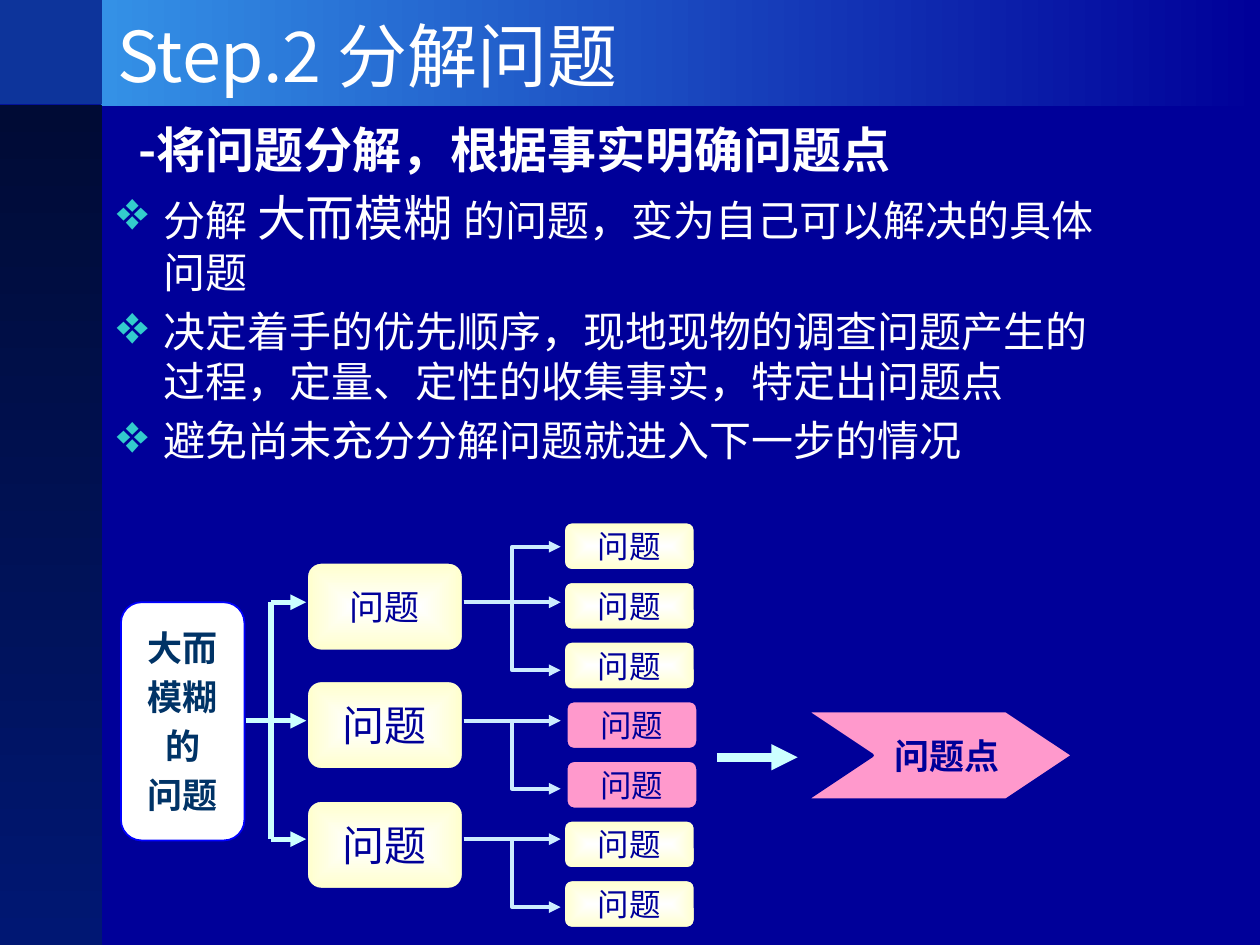
from dataclasses import dataclass
from typing import Optional

from lxml import etree
from pptx import Presentation
from pptx.dml.color import RGBColor
from pptx.enum import shapes, text
from pptx.oxml import ns
from pptx.util import Inches, Pt

KIND = shapes.MSO_SHAPE
LINK = shapes.MSO_CONNECTOR


@dataclass(frozen=True)
class Theme:
    """Colours, font and type sizes of the slide."""
    font: str = "Noto Sans CJK SC"
    navy: str = "000099"
    white: str = "FFFFFF"
    cream: str = "FFFFCC"
    pink: str = "FF99CC"
    ink: str = "003366"
    edge: str = "0000FF"
    mark: str = "33CCCC"
    pale: str = "CCECFF"
    cyan: str = "CCFFFF"
    sky: str = "3491E6"
    night: str = "000B35"
    dusk: str = "001773"
    blue: str = "0D349B"
    title: int = 40
    head: int = 28
    body: int = 24
    label: int = 20
    leaf: int = 18


T = Theme()


@dataclass(frozen=True)
class Box:
    """A filled shape with an optional label."""
    x: float
    y: float
    w: float
    h: float
    fill: tuple[str, ...]
    kind: int = KIND.ROUNDED_RECTANGLE
    turn: Optional[int] = None
    line: Optional[str] = None
    width: float = 2
    lines: tuple[str, ...] = ()
    size: int = T.leaf
    ink: str = T.navy
    bold: bool = False
    pad: float = 0


@dataclass(frozen=True)
class Wire:
    """A line between two points."""
    x1: float
    y1: float
    x2: float
    y2: float
    color: str
    width: float
    kind: int = LINK.STRAIGHT
    tip: bool = True


def rgb(code: str) -> RGBColor:
    """Turn a hex code into a colour."""
    return RGBColor.from_string(code)


def add(parent, tag: str, **attrs: str):
    """Append a DrawingML element."""
    return etree.SubElement(parent, ns.qn(tag), attrs)


def style(para, size: int, color: str, bold: bool = False) -> None:
    """Set the font of a whole paragraph."""
    font = para.font
    font.size, font.bold, font.name = Pt(size), bold, T.font
    font.color.rgb = rgb(color)
    add(para._p.pPr.find(ns.qn("a:defRPr")), "a:ea", typeface=T.font)


def paint(shape, box: Box) -> None:
    """Fill a shape with a plain colour, a linear or a centred gradient."""
    fill = shape.fill
    if len(box.fill) == 1:
        fill.solid()
        fill.fore_color.rgb = rgb(box.fill[0])
        return
    fill.gradient()
    for stop, code in zip(fill.gradient_stops, box.fill):
        stop.color.rgb = rgb(code)
    if box.turn is not None:
        fill.gradient_angle = box.turn
        return
    grad = shape._element.spPr.find(ns.qn("a:gradFill"))
    grad.remove(grad.find(ns.qn("a:lin")))
    path = add(grad, "a:path", path="shape")
    add(path, "a:fillToRect", l="50000", t="50000", r="50000", b="50000")


def draw(slide, box: Box):
    """Draw a box and its label."""
    place = map(Inches, (box.x, box.y, box.w, box.h))
    shape = slide.shapes.add_shape(box.kind, *place)
    shape.shadow.inherit = False
    paint(shape, box)
    if box.line:
        shape.line.color.rgb = rgb(box.line)
        shape.line.width = Pt(box.width)
    else:
        shape.line.fill.background()
    frame = shape.text_frame
    frame.word_wrap = False
    frame.vertical_anchor = text.MSO_ANCHOR.MIDDLE
    frame.margin_left = Inches(box.pad)
    frame.margin_top = frame.margin_right = frame.margin_bottom = 0
    for i, words in enumerate(box.lines):
        para = frame.add_paragraph() if i else frame.paragraphs[0]
        para.text = words
        para.alignment = text.PP_ALIGN.CENTER
        para.space_before = Pt(4 if i else 0)
        style(para, box.size, box.ink, box.bold)
    return shape


def join(slide, wire: Wire) -> None:
    """Draw a line, with an arrowhead at its end if it has a tip."""
    ends = map(Inches, (wire.x1, wire.y1, wire.x2, wire.y2))
    link = slide.shapes.add_connector(wire.kind, *ends)
    link.line.color.rgb = rgb(wire.color)
    link.line.width = Pt(wire.width)
    if wire.tip:
        add(link.line._get_or_add_ln(), "a:tailEnd", type="triangle")
    add(link._element.spPr, "a:effectLst")


def write(slide) -> None:
    """Write the heading and the bulleted points."""
    place = map(Inches, (0.83, 0.9, 7.95, 3.15))
    frame = slide.shapes.add_textbox(*place).text_frame
    frame.word_wrap = True
    points = (
        ("-将问题分解，根据事实明确问题点",),
        ("分解 ", "大而模糊 ", "的问题，变为自己可以解决的具体问题"),
        ("决定着手的优先顺序，现地现物的调查问题产生的过程，定量、定性的收集事实，特定出问题点",),
        ("避免尚未充分分解问题就进入下一步的情况",),
    )
    for i, runs in enumerate(points):
        para = frame.add_paragraph() if i else frame.paragraphs[0]
        for j, words in enumerate(runs):
            run = para.add_run()
            run.text = words
            if j == 1:
                run.font.size = Pt(T.head)
        para.space_before = Pt(5 if i else 0)
        props = para._p.get_or_add_pPr()
        props.set("marL", str(Inches(0.37)))
        props.set("indent", str(Inches(-0.37 if i else -0.2)))
        if i:
            add(add(props, "a:buClr"), "a:srgbClr", val=T.mark)
            add(props, "a:buSzPct", val="130000")
            add(props, "a:buChar", char="❖")
        else:
            add(props, "a:buNone")
        style(para, T.body if i else T.head, T.white, not i)


def tree(slide) -> None:
    """Draw the breakdown from the vague problem to the problem point."""
    cream = (T.white, T.cream)
    mids, tops = (4.78, 5.72, 6.66), (4.46, 5.4, 6.35)
    kids = ((4.34, 4.78, 5.32), (5.72, 6.26), (6.66, 7.2))
    for top, mid, ends, size in zip(tops, mids, kids, (T.label, T.body, T.body)):
        draw(slide, Box(2.43, top, 1.25, 0.71, cream, line=T.navy,
                        lines=("问题",), size=size))
        for y in ends:
            kind = LINK.STRAIGHT if y == mid else LINK.ELBOW
            join(slide, Wire(3.68, mid, 4.45, y, T.pale, 2.25, kind))
    for i in range(7):
        hot = i in (3, 4)
        draw(slide, Box(4.49 if hot else 4.47, 4.14 + i * 2.84 / 6, 1.05, 0.39,
                        (T.pink,) if hot else cream, line=T.navy,
                        lines=("问题",)))
    draw(slide, Box(0.96, 4.78, 0.98, 1.89, (T.white,),
                    KIND.FLOWCHART_ALTERNATE_PROCESS, line=T.edge, width=1,
                    lines=("大而", "模糊", "的", "问题"), size=T.label,
                    ink=T.ink, bold=True))
    for x, y in zip((2.15, 1.95, 2.15), mids):
        join(slide, Wire(x, y, 2.43, y, T.cyan, 3))
    join(slide, Wire(2.15, mids[0], 2.15, mids[2], T.cyan, 3, tip=False))
    join(slide, Wire(5.69, 6.01, 6.33, 6.01, T.cyan, 5))
    goal = draw(slide, Box(6.39, 5.64, 2.13, 0.71, (T.pink,), KIND.CHEVRON,
                           line=T.navy, lines=("问题点",), size=T.label,
                           bold=True, pad=0.12))
    goal.adjustments[0] = 0.75


def main() -> None:
    """Build the slide and save it."""
    deck = Presentation()
    deck.slide_width, deck.slide_height = Inches(10), Inches(7.5)
    slide = deck.slides.add_slide(deck.slide_layouts[5])
    slide.background.fill.solid()
    slide.background.fill.fore_color.rgb = rgb(T.navy)
    flat = KIND.RECTANGLE
    draw(slide, Box(0.8, 0, 9.2, 0.84, (T.sky, T.navy), flat, 0))
    draw(slide, Box(0, 0.83, 0.81, 6.67, (T.night, T.dusk), flat, 270))
    draw(slide, Box(0, 0, 0.81, 0.83, (T.blue,), flat))
    title = slide.shapes.title
    slide.shapes._spTree.append(title._element)
    title.left, title.top, title.width, title.height = map(
        Inches, (0.83, 0.12, 8.17, 0.62))
    title.text_frame.text = "Step.2 分解问题"
    title.text_frame.auto_size = text.MSO_AUTO_SIZE.NONE
    title.text_frame.vertical_anchor = text.MSO_ANCHOR.MIDDLE
    para = title.text_frame.paragraphs[0]
    para.alignment = text.PP_ALIGN.LEFT
    style(para, T.title, T.white)
    write(slide)
    tree(slide)
    deck.save("out.pptx")


if __name__ == "__main__":
    main()
